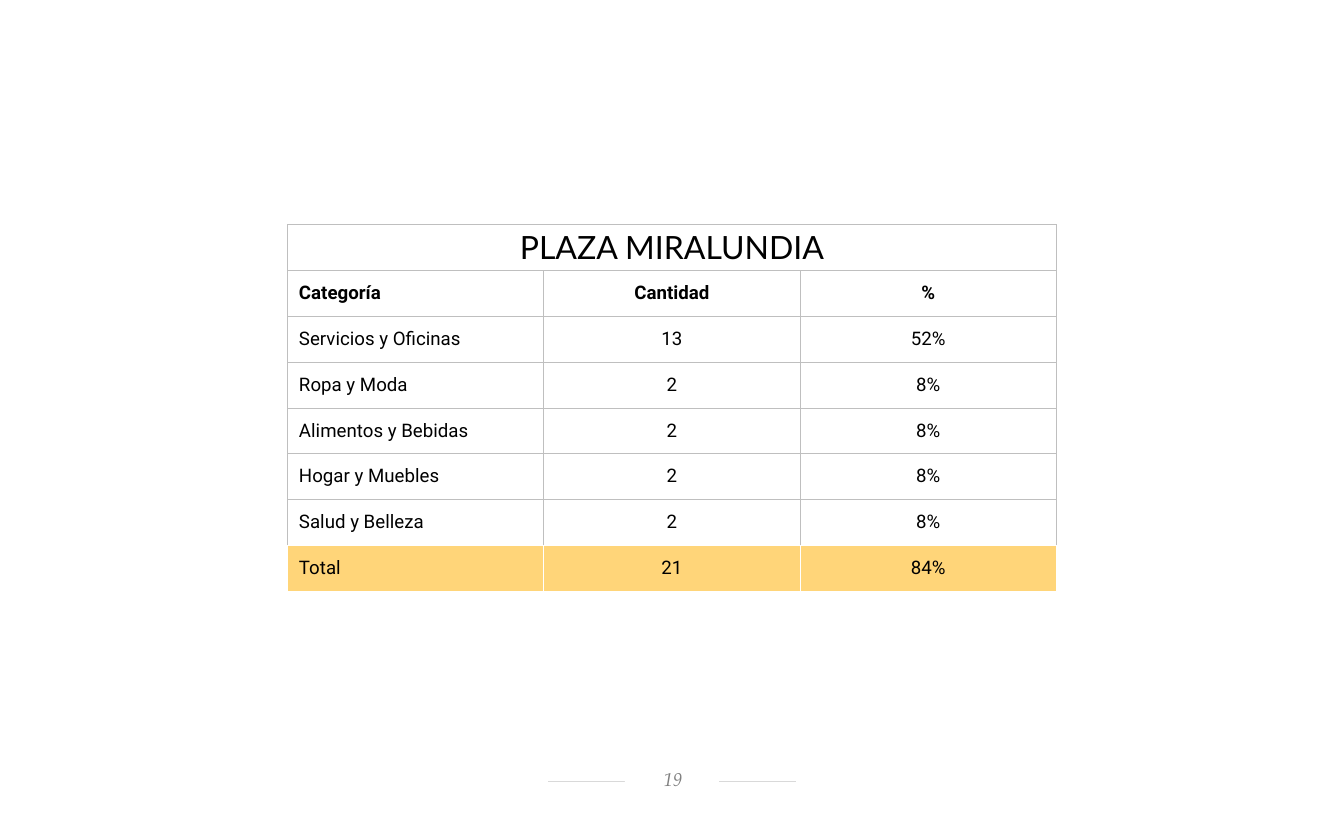
from lxml import etree
from pptx import Presentation, util as u
from pptx.dml.color import RGBColor
from pptx.enum import shapes, text
from pptx.oxml.ns import qn

WIDTH, HEIGHT = u.Inches(14), u.Inches(8.5)
BLACK = RGBColor(0x00, 0x00, 0x00)
WHITE = RGBColor(0xFF, 0xFF, 0xFF)
GRAY = RGBColor(0x80, 0x80, 0x80)
BORDER = RGBColor(0xBF, 0xBF, 0xBF)
RULE = RGBColor(0xD9, 0xD9, 0xD9)
YELLOW = RGBColor(0xFF, 0xD5, 0x79)

TITLE = {"name": "Lato", "size": u.Pt(24), "bold": False}
HEADING = {"name": "Roboto", "size": u.Pt(14), "bold": True}
BODY = HEADING | {"bold": False}
NUMBER = {"name": "TeX Gyre Pagella", "size": u.Pt(14), "italic": True}

ROWS = [
    ("PLAZA MIRALUNDIA", "", ""),
    ("Categoría", "Cantidad", "%"),
    ("Servicios y Oficinas", "13", "52%"),
    ("Ropa y Moda", "2", "8%"),
    ("Alimentos y Bebidas", "2", "8%"),
    ("Hogar y Muebles", "2", "8%"),
    ("Salud y Belleza", "2", "8%"),
    ("Total", "21", "84%"),
]


def set_all(target, values):
    for name, value in values.items():
        setattr(target, name, value)


def margins(left, top, right, bottom):
    names = ("margin_left", "margin_top", "margin_right", "margin_bottom")
    return dict(zip(names, map(u.Inches, (left, top, right, bottom))))


def write(frame, words, font, color, align):
    para = frame.paragraphs[0]
    para.alignment = align
    span = para.add_run()
    span.text = words
    set_all(span.font, font)
    span.font.color.rgb = color


def set_borders(cell, **colors):
    """Draw thin cell borders; must run before the cell gets its fill."""
    properties = cell._tc.get_or_add_tcPr()
    for side in ("L", "R", "T", "B"):
        line = etree.SubElement(properties, qn(f"a:ln{side}"), w=str(u.Pt(0.5)))
        fill = etree.SubElement(line, qn("a:solidFill"))
        etree.SubElement(fill, qn("a:srgbClr"), val=str(colors.get(side, colors["default"])))


def add_category_table(page, left, top, width, height):
    count, columns = len(ROWS), len(ROWS[0])
    table = page.shapes.add_table(count, columns, left, top, width, height).table
    set_all(table, {"first_row": False, "horz_banding": False})
    total = count - 1
    for r, row in enumerate(ROWS):
        font = {0: TITLE, 1: HEADING}.get(r, BODY)
        for c, words in enumerate(row):
            cell = table.cell(r, c)
            is_label = c == 0 and r > 0
            set_all(cell, margins(0.12 if is_label else 0.01, 0.01, 0.01, 0.01))
            cell.vertical_anchor = text.MSO_ANCHOR.MIDDLE
            bottom = WHITE if r >= total - 1 else BORDER
            set_borders(cell, default=WHITE if r == total else BORDER, B=bottom)
            if r == total:
                cell.fill.solid()
                cell.fill.fore_color.rgb = YELLOW
            else:
                cell.fill.background()
            if words:
                align = text.PP_ALIGN.LEFT if is_label else text.PP_ALIGN.CENTER
                write(cell.text_frame, words, font, BLACK, align)
    table.cell(0, 0).merge(table.cell(0, columns - 1))


def add_page_number(page, number, left, top, width, height):
    """Centre the number on a rule, in a white box that interrupts it."""
    middle = top + height * 55 // 100
    rule = page.shapes.add_connector(
        shapes.MSO_CONNECTOR.STRAIGHT, left, middle, left + width, middle)
    rule.line.color.rgb = RULE
    rule.line.width = u.Pt(0.5)
    etree.SubElement(rule._element.spPr, qn("a:effectLst"))

    gap = int(width * 0.38)
    box = page.shapes.add_shape(
        shapes.MSO_SHAPE.RECTANGLE, left + (width - gap) // 2, top, gap, height)
    box.shadow.inherit = False
    box.fill.solid()
    box.fill.fore_color.rgb = WHITE
    box.line.fill.background()
    frame = box.text_frame
    set_all(frame, margins(0.12, 0.02, 0.1, 0.05))
    set_all(frame, {"word_wrap": True, "vertical_anchor": text.MSO_ANCHOR.MIDDLE})
    write(frame, number, NUMBER, GRAY, text.PP_ALIGN.CENTER)


def main():
    deck = Presentation()
    set_all(deck, {"slide_width": WIDTH, "slide_height": HEIGHT})
    page = deck.slides.add_slide(deck.slide_layouts[6])

    number_width = u.Inches(2.58)
    add_page_number(page, "19", (WIDTH - number_width) // 2, u.Inches(7.98),
                    number_width, u.Inches(0.29))
    table_width = u.Inches(8.01)
    add_category_table(page, (WIDTH - table_width) // 2, u.Inches(2.34),
                       table_width, u.Inches(3.82))
    deck.save("out.pptx")


if __name__ == "__main__":
    main()
